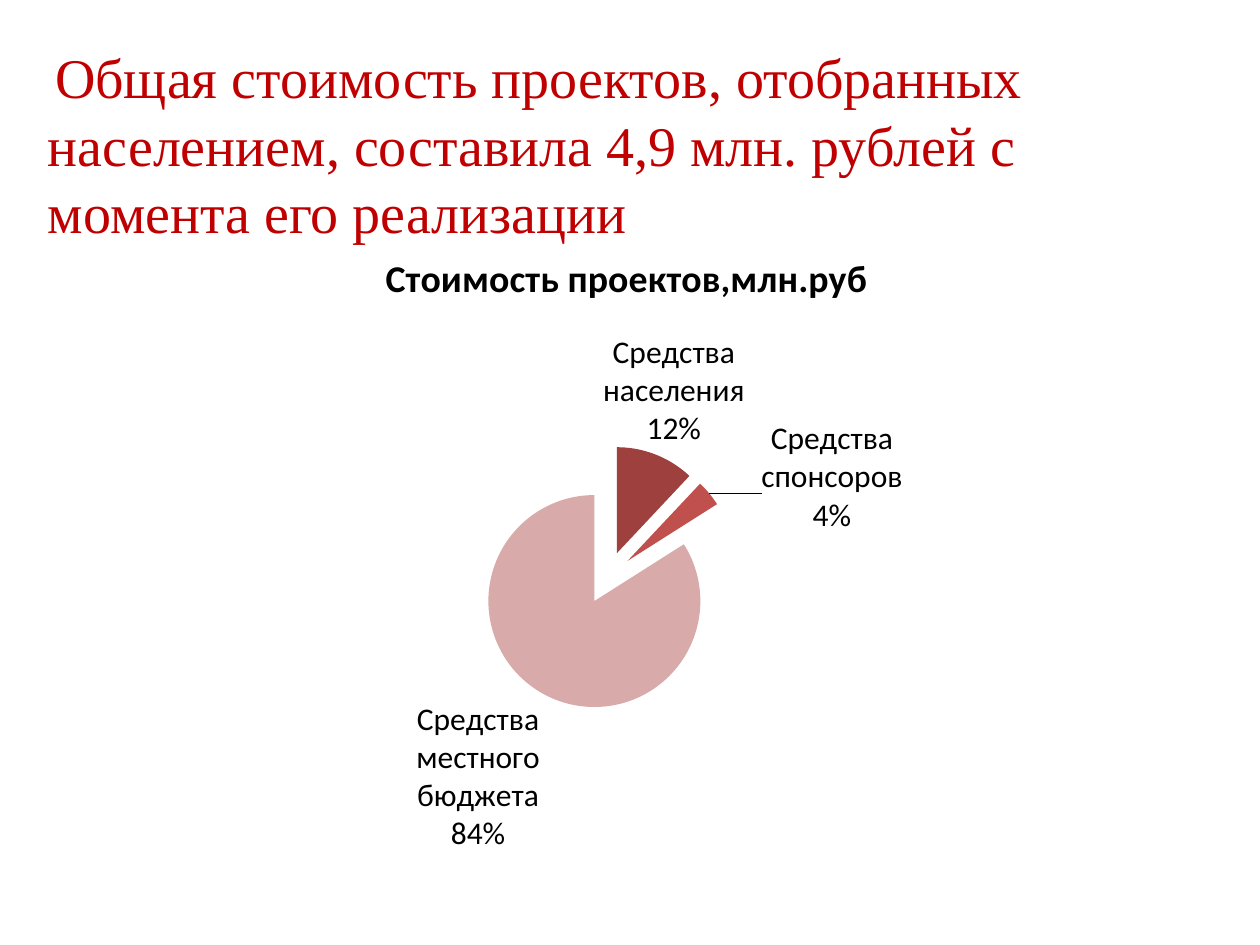
"""Build a slide with a pie chart of project funding sources."""
import pptx
import pptx.chart.data
import pptx.dml.color
import pptx.enum.chart
import pptx.enum.text
import pptx.oxml
import pptx.oxml.ns
import pptx.util
from pptx.util import Inches

BLACK = pptx.dml.color.RGBColor(0x00, 0x00, 0x00)
TITLE_RED = pptx.dml.color.RGBColor(0xC0, 0x00, 0x00)
SLICES = {
    "Средства населения": (12, pptx.dml.color.RGBColor(0x9E, 0x41, 0x3E)),
    "Средства спонсоров": (4, pptx.dml.color.RGBColor(0xC0, 0x50, 0x4D)),
    "Средства местного бюджета": (84, pptx.dml.color.RGBColor(0xD8, 0xAA, 0xA9)),
}
LABEL_SHIFTS = ((-0.06, 0), (0.05, 0.07))
CHART_TITLE = "Стоимость проектов,млн.руб"
HEADING = (
    "Общая стоимость проектов, отобранных населением, "
    "составила 4,9 млн. рублей с момента его реализации"
)
CHART_NAMESPACE = pptx.oxml.ns.nsdecls("c")


def set_font(font, name, size, color, bold=False):
    values = {"name": name, "size": pptx.util.Pt(size), "bold": bold}
    for attribute, value in values.items():
        setattr(font, attribute, value)
    font.color.rgb = color


deck = pptx.Presentation()
deck.slide_width = Inches(10)
deck.slide_height = Inches(7.5)
page = deck.slides.add_slide(deck.slide_layouts[5])

title = page.shapes.title
placement = {"left": 0.28, "top": 0.29, "width": 9.53, "height": 1.72}
for attribute, value in placement.items():
    setattr(title, attribute, Inches(value))
frame = title.text_frame
frame_format = {
    "word_wrap": True,
    "auto_size": pptx.enum.text.MSO_AUTO_SIZE.NONE,
    "vertical_anchor": pptx.enum.text.MSO_ANCHOR.TOP,
}
for attribute, value in frame_format.items():
    setattr(frame, attribute, value)
para = frame.paragraphs[0]
para.alignment = pptx.enum.text.PP_ALIGN.LEFT
for text, name, size, color in (
    (" ", "Calibri", 18, BLACK),
    (HEADING, "Times New Roman", 32, TITLE_RED),
):
    span = para.add_run()
    span.text = text
    set_font(span.font, name, size, color)

data = pptx.chart.data.CategoryChartData()
data.categories = list(SLICES)
data.add_series(CHART_TITLE, [value for value, color in SLICES.values()])
chart = page.shapes.add_chart(
    pptx.enum.chart.XL_CHART_TYPE.PIE,
    Inches(1.3), Inches(1.78), Inches(7.35), Inches(5.14), data,
).chart
set_font(chart.font, "Calibri", 18, BLACK)
chart.has_legend = False
chart.has_title = True
chart_heading = chart.chart_title.text_frame
chart_heading.text = CHART_TITLE
set_font(chart_heading.paragraphs[0].runs[0].font, "Calibri", 21.6, BLACK, True)

plot = chart.plots[0]
plot.vary_by_categories = True
series = plot.series[0]
for index, (value, color) in enumerate(SLICES.values()):
    fill = series.points[index].format.fill
    fill.solid()
    fill.fore_color.rgb = color
explosion = pptx.oxml.parse_xml(f'<c:explosion {CHART_NAMESPACE} val="25"/>')
first_point = series._element.find(pptx.oxml.ns.qn("c:dPt"))
first_point.addprevious(explosion)

labels = series.data_labels
label_format = {
    "show_value": False,
    "show_category_name": True,
    "show_percentage": True,
    "position": pptx.enum.chart.XL_LABEL_POSITION.OUTSIDE_END,
}
for attribute, value in label_format.items():
    setattr(labels, attribute, value)
set_font(labels.font, "Calibri", 18, BLACK)
separator = pptx.oxml.parse_xml(
    f"<c:separator {CHART_NAMESPACE}>\n</c:separator>"
)
labels._element.find(pptx.oxml.ns.qn("c:showBubbleSize")).addnext(separator)
for index, (shift_x, shift_y) in enumerate(LABEL_SHIFTS):
    label = pptx.oxml.parse_xml(
        f'<c:dLbl {CHART_NAMESPACE}><c:idx val="{index}"/>'
        f'<c:layout><c:manualLayout><c:x val="{shift_x}"/><c:y val="{shift_y}"/>'
        '</c:manualLayout></c:layout><c:dLblPos val="outEnd"/>'
        '<c:showLegendKey val="0"/><c:showVal val="0"/><c:showCatName val="1"/>'
        '<c:showSerName val="0"/><c:showPercent val="1"/>'
        '<c:showBubbleSize val="0"/><c:separator>\n</c:separator></c:dLbl>'
    )
    labels._element.insert(index, label)

deck.save("out.pptx")
